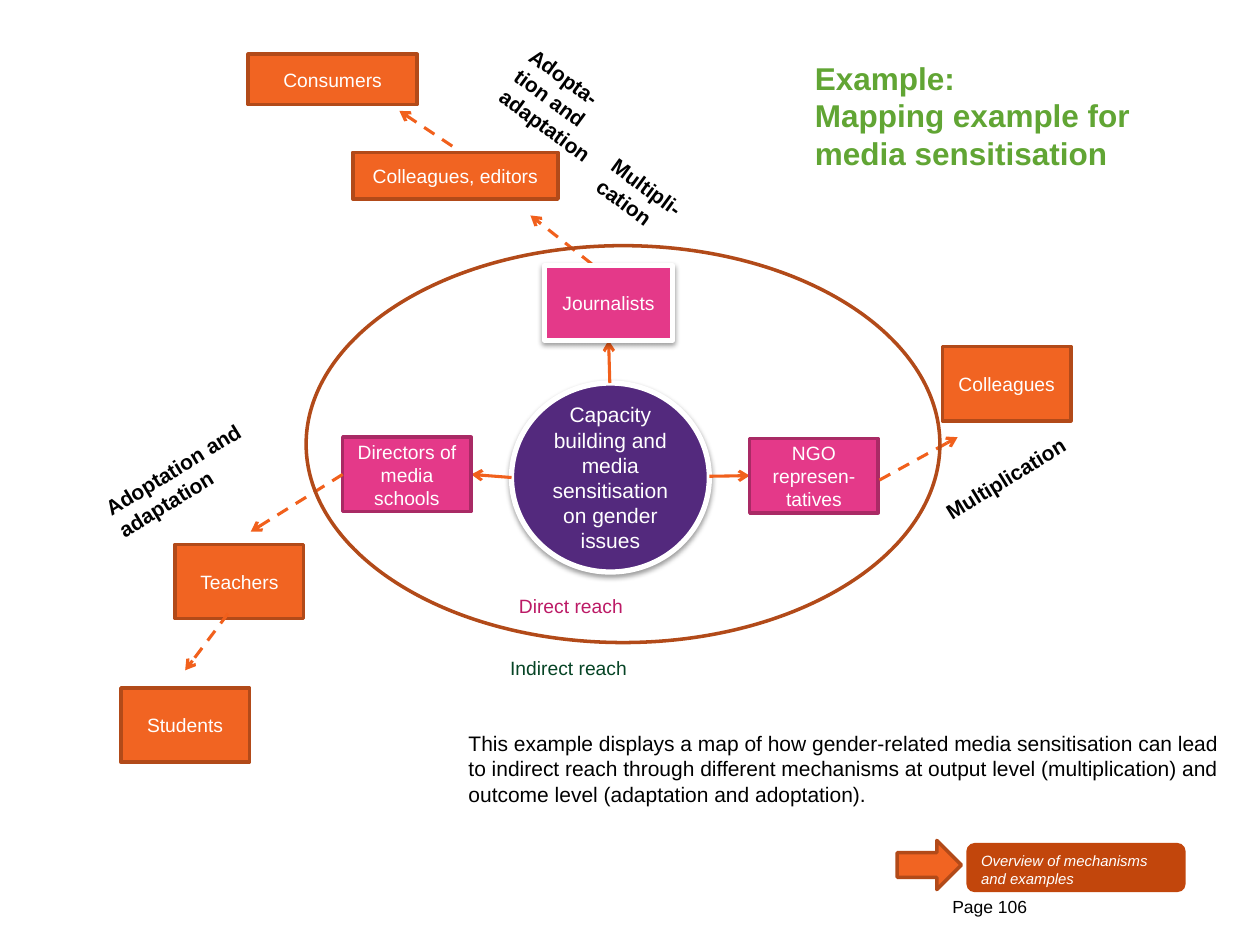
"""Build a slide that maps the direct and indirect reach of media sensitisation."""
from lxml import etree
from pptx import Presentation
from pptx.dml.color import RGBColor
from pptx.enum.dml import MSO_LINE
from pptx.enum.shapes import MSO_CONNECTOR, MSO_SHAPE
from pptx.enum.text import MSO_ANCHOR, MSO_AUTO_SIZE, PP_ALIGN
from pptx.oxml.ns import qn
from pptx.util import Inches, Pt

RECTANGLE, OVAL = MSO_SHAPE.RECTANGLE, MSO_SHAPE.OVAL
RIGHT_ARROW = MSO_SHAPE.RIGHT_ARROW
ROUNDED = MSO_SHAPE.FLOWCHART_ALTERNATE_PROCESS
STRAIGHT, DASH = MSO_CONNECTOR.STRAIGHT, MSO_LINE.DASH
TOP, MIDDLE, BOTTOM = MSO_ANCHOR.TOP, MSO_ANCHOR.MIDDLE, MSO_ANCHOR.BOTTOM
LEFT, CENTER = PP_ALIGN.LEFT, PP_ALIGN.CENTER
FIXED = MSO_AUTO_SIZE.NONE

WHITE, BLACK = "FFFFFF", "000000"
ORANGE, BROWN, RUST, ARROW = "F16422", "B24A19", "C2460C", "F1601C"
PINK, DARK_PINK, PURPLE = "E43989", "A92A65", "53297D"
TITLE_GREEN, REACH_PINK, REACH_GREEN = "61A534", "BC1A66", "064425"
BOX_WIDTH, BOX_HEIGHT = 1.02, 0.59


def color(value):
    """Return the colour for a hex string."""
    return RGBColor.from_string(value)


def apply(target, values):
    """Set each attribute of the target from a dict."""
    for name, value in values.items():
        setattr(target, name, value)


class ReachMap:
    """Hold the style and the current slide, and draw each kind of element."""

    font_name = "Arial"
    arrow_weight = 1.75

    def __init__(self, presentation):
        """Add a blank slide."""
        self.slide = presentation.slides.add_slide(presentation.slide_layouts[6])

    def label(self, shape, text, size, text_color, align=LEFT, anchor=TOP,
              wrap=True, frame=None, **font):
        """Put one formatted paragraph into a shape."""
        text_frame = shape.text_frame
        apply(text_frame, {"auto_size": FIXED, "word_wrap": wrap,
                           "vertical_anchor": anchor, **(frame or {})})
        paragraph = text_frame.paragraphs[0]
        apply(paragraph, {"text": text, "alignment": align})
        apply(paragraph.font, {"name": self.font_name, "size": Pt(size), **font})
        paragraph.font.color.rgb = color(text_color)

    def text(self, at, text, size, text_color=BLACK, rotation=0, **options):
        """Add a text box."""
        box = self.slide.shapes.add_textbox(*map(Inches, at))
        box.rotation = rotation
        self.label(box, text, size, text_color, **options)

    def shape(self, kind, at, fill=None, line=None, weight=2, shadow=False):
        """Add a preset shape."""
        shape = self.slide.shapes.add_shape(kind, *map(Inches, at))
        shape.shadow.inherit = False
        if fill:
            shape.fill.solid()
            shape.fill.fore_color.rgb = color(fill)
        else:
            shape.fill.background()
        if line:
            shape.line.color.rgb = color(line)
            shape.line.width = Pt(weight)
        else:
            shape.line.fill.background()
        if shadow:
            self.cast_shadow(shape)
        return shape

    def cast_shadow(self, shape):
        """Give a shape a soft shadow straight below it."""
        effects = shape.element.spPr.find(qn("a:effectLst"))
        outer = etree.SubElement(
            effects, qn("a:outerShdw"), blurRad=str(Pt(3.1)), dist=str(Pt(1.6)),
            dir="5400000", rotWithShape="0")
        tone = etree.SubElement(outer, qn("a:srgbClr"), val=BLACK)
        etree.SubElement(tone, qn("a:alpha"), val="38000")

    def box(self, caption, left, top, width=BOX_WIDTH, height=BOX_HEIGHT,
            fill=ORANGE, line=BROWN, **style):
        """Add a labelled rectangle."""
        shape = self.shape(RECTANGLE, (left, top, width, height), fill, line, **style)
        self.label(shape, caption, 11, WHITE, CENTER, MIDDLE)
        return shape

    def arrow(self, start, end, dash=None):
        """Add a straight arrow."""
        connector = self.slide.shapes.add_connector(
            STRAIGHT, *map(Inches, (*start, *end)))
        connector.line.color.rgb = color(ARROW)
        apply(connector.line, {"width": Pt(self.arrow_weight), "dash_style": dash})
        properties = connector.element.spPr
        etree.SubElement(properties.find(qn("a:ln")), qn("a:tailEnd"), type="arrow")
        etree.SubElement(properties, qn("a:effectLst"))
        return connector


def main():
    """Draw the map and save it."""
    presentation = Presentation()
    apply(presentation, {"slide_width": Inches(10), "slide_height": Inches(7.5)})
    reach = ReachMap(presentation)

    reach.text((7.46, 7.06, 1.34, 0.18), "Page 106", 10)
    reach.text((6.37, 0.34, 3.24, 1.15),
               "Example:\nMapping example for\nmedia sensitisation",
               18, TITLE_GREEN, anchor=MIDDLE, bold=True)

    center = reach.shape(OVAL, (4.06, 3.04, 1.57, 1.5), PURPLE, WHITE, 3, True)
    reach.label(center, "Capacity building and media sensitisation on gender issues",
                12, WHITE, CENTER, MIDDLE,
                frame={"margin_left": 0, "margin_right": 0})

    to_journalists = reach.arrow((4.84, 3.04), (4.84, 2.7))
    to_ngo = reach.arrow((5.63, 3.78), (5.95, 3.78))
    to_directors = reach.arrow((4.06, 3.79), (3.74, 3.79))
    reach.arrow((4.83, 2.2), (4.21, 1.71), DASH)
    reach.arrow((3.59, 1.16), (3.17, 0.88), DASH)

    reach.box("Consumers", 1.97, 0.43, 1.34, 0.4)
    reach.box("Colleagues, editors", 2.8, 1.21, 1.63, 0.37)
    reach.box("Colleagues", 7.48, 2.75)
    reach.box("Teachers", 1.39, 4.32)
    reach.box("Students", 0.96, 5.46)
    ngo = reach.box("NGO represen-tatives", 5.95, 3.48, fill=PINK, line=DARK_PINK)
    directors = reach.box("Directors of media schools", 2.72, 3.47,
                          fill=PINK, line=DARK_PINK)
    journalists = reach.box("Journalists", 4.32, 2.11, fill=PINK, line=WHITE,
                            weight=3, shadow=True)

    reach.arrow((6.98, 3.81), (7.6, 3.47), DASH)
    to_teachers = reach.arrow((2.72, 3.77), (1.99, 4.22), DASH)
    reach.arrow((1.81, 4.87), (1.47, 5.32), DASH)

    to_journalists.end_connect(journalists, 2)
    to_ngo.end_connect(ngo, 1)
    to_directors.end_connect(directors, 3)
    to_teachers.begin_connect(directors, 1)

    reach.shape(OVAL, (2.43, 1.95, 5.03, 3.15), line=BROWN)

    for text, left, top, width, rotation, margin in (
            ("Multiplication", 7.28, 3.23, 1, 328.4, 0.24),
            ("Multipli-\ncation", 4.79, 0.91, 1, 36.2, 0.05),
            ("Adoptation and\nadaptation", 0.59, 3.12, 1.33, 328.4, 0.05),
            ("Adopta-\ntion and\nadaptation", 4.02, 0.2, 1, 36.2, 0.05)):
        reach.text((left, top, width, 1), text, 12, rotation=rotation, anchor=BOTTOM,
                   wrap=False, frame={"margin_bottom": Inches(margin)}, bold=True)

    for text, left, top, tone in (("Direct reach", 4.02, 3.95, REACH_PINK),
                                  ("Indirect reach", 3.95, 4.44, REACH_GREEN)):
        reach.text((left, top, 1, 1), text, 11, tone, anchor=BOTTOM, wrap=False)

    reach.text((3.62, 5.75, 6.24, 0.71),
               "This example displays a map of how gender-related media sensitisation "
               "can lead to indirect reach through different mechanisms at output level "
               "(multiplication) and outcome level (adaptation and adoptation).", 12)

    reach.shape(RIGHT_ARROW, (7.12, 6.67, 0.51, 0.39), ORANGE, BROWN)
    overview = reach.shape(ROUNDED, (7.67, 6.69, 1.74, 0.39), RUST)
    reach.label(overview, "Overview of mechanisms\nand examples", 8.5, WHITE,
                wrap=False, italic=True)

    presentation.save("out.pptx")


if __name__ == "__main__":
    main()
